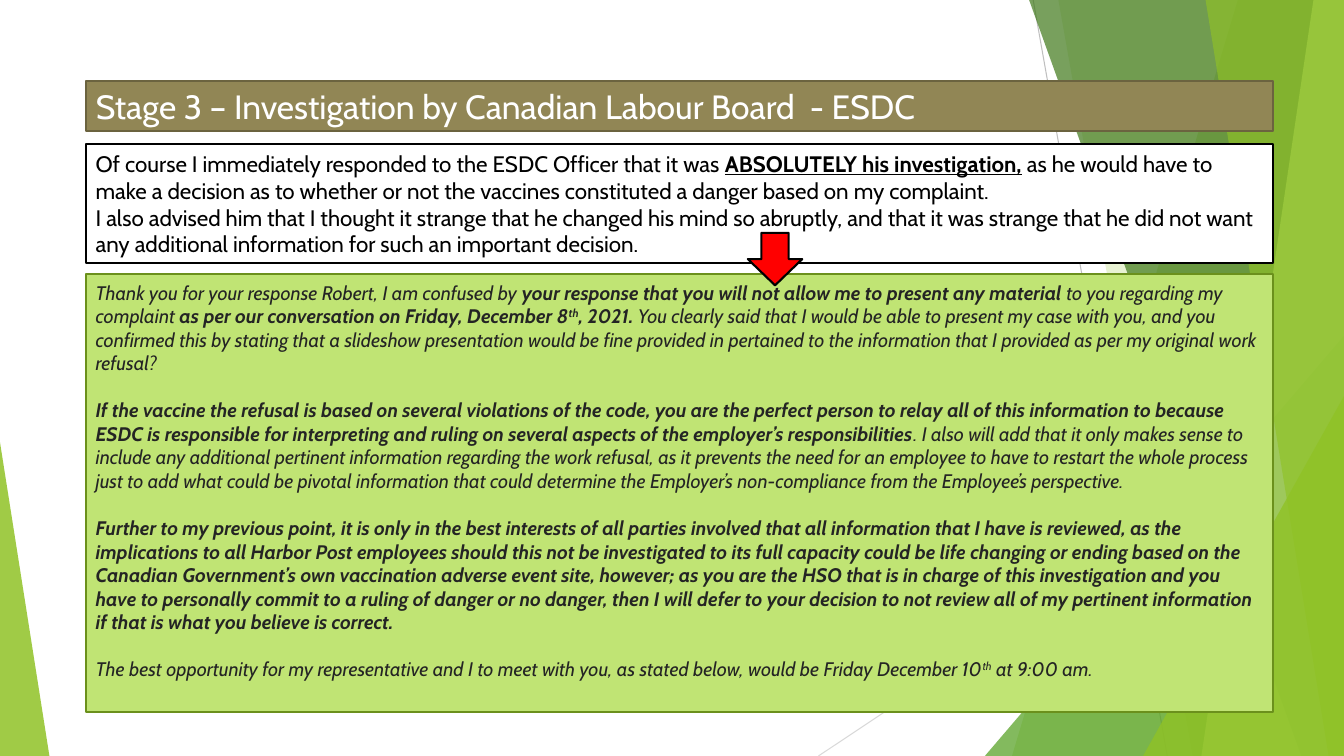
from lxml.etree import SubElement
from pptx import Presentation
from pptx.dml.color import RGBColor
from pptx.enum.shapes import MSO_CONNECTOR, MSO_SHAPE
from pptx.enum.text import MSO_ANCHOR, MSO_AUTO_SIZE, PP_ALIGN
from pptx.oxml.ns import qn
from pptx.util import Pt

# Content: each paragraph is a list of (text, style); b bold, u underline, s superscript
TITLE = [[("Stage 3 – Investigation by Canadian Labour Board  - ESDC", "")]]
REPLY = [
    [("Of course I immediately responded to the ESDC Officer that it was ", ""),
     ("ABSOLUTELY his investigation,", "bu"),
     (" as he would have to make a decision as to whether or not the vaccines constituted "
      "a danger based on my complaint.", "")],
    [("I also advised him that I thought it strange that he changed his mind so abruptly, "
      "and that it was strange that he did not want any additional information for such "
      "an important decision.", "")],
]
LETTER = [
    [("Thank you for your response Robert, I am confused by ", ""),
     ("your response that you will not allow me to present any material ", "b"),
     ("to you regarding my complaint ", ""),
     ("as per our conversation on Friday, December 8", "b"),
     ("th", "bs"),
     (", 2021. ", "b"),
     ("You clearly said that I would be able to present my case with you, and you confirmed "
      "this by stating that a slideshow presentation would be fine provided in pertained to "
      "the information that I provided as per my original work refusal?", "")],
    [("If the vaccine the refusal is based on several violations of the code, you are the "
      "perfect person to relay all of this information to because ESDC is responsible for "
      "interpreting and ruling on several aspects of the employer’s responsibilities", "b"),
     (". I also will add that it only makes sense to include any additional pertinent "
      "information regarding the work refusal, as it prevents the need for an employee to "
      "have to restart the whole process just to add what could be pivotal information that "
      "could determine the Employer’s non-compliance from the Employee’s perspective.", "")],
    [("Further to my previous point, it is only in the best interests of all parties involved "
      "that all information that I have is reviewed, as the implications to all Harbor Post "
      "employees should this not be investigated to its full capacity could be life changing "
      "or ending based on the Canadian Government’s own vaccination adverse event site, "
      "however; as you are the HSO that is in charge of this investigation and you have to "
      "personally commit to a ruling of danger or no danger, then I will defer to your "
      "decision to not review all of my pertinent information if that is what you believe "
      "is correct.", "b")],
    [("The best opportunity for my representative and I to meet with you, as stated below, "
      "would be Friday December 10", ""),
     ("th", "s"),
     (" at 9:00 am.", "")],
]
COLORS = {
    "lime": "90C226", "green": "54A021", "forest": "3F7819", "pale": "C0E474",
    "olive": "918655", "olive edge": "6B633F", "lime edge": "6B901C",
    "white": "FFFFFF", "black": "000000", "ink": "242424", "red": "FF0000",
    "grey": "BFBFBF", "light grey": "D9D9D9",
}
WIDTH, HEIGHT = 960, 540
BOX_LEFT, BOX_WIDTH = 61.2, 848.2

RAYS = [(738, 0, 833.8, HEIGHT, "grey"), (WIDTH, 290.2, 584.6, HEIGHT, "light grey")]
# Bands run to the right edge: top x, bottom x, colour, opacity in percent
# Wedges stand on the bottom edge: left, width, height, apex, colour, opacity
BACKDROP = [
    ("band", (884.2, 722.9), "lime", 30),
    ("band", (756, 851.8), "lime", 20),
    ("wedge", (703.5, 256.5, 300.2, 1), "green", 72),
    ("band", (735.1, 929.5), "forest", 70),
    ("band", (938.2, 858.2), "pale", 70),
    ("band", (861.1, 949), "lime", 65),
    ("wedge", (816.5, 143.5, 257, 1), "lime", 80),
    ("wedge", (0, 35.3, 224, 0), "lime", 85),
]

presentation = Presentation()
presentation.slide_width, presentation.slide_height = Pt(WIDTH), Pt(HEIGHT)
slide = presentation.slides.add_slide(presentation.slide_layouts[5])
shapes = slide.shapes


def rgb(name):
    return RGBColor.from_string(COLORS[name])


def paint(shape, fill, edge=None, opacity=100):
    shape.fill.solid()
    shape.fill.fore_color.rgb = rgb(fill)
    if opacity < 100:
        color = shape.fill._xPr.find(qn("a:solidFill"))[0]
        SubElement(color, qn("a:alpha"), val=str(opacity * 1000))
    if edge:
        shape.line.color.rgb = rgb(edge)
        shape.line.width = Pt(1.5)
    else:
        shape.line.fill.background()


def add_preset(kind, left, top, width, height):
    shape = shapes.add_shape(kind, Pt(left), Pt(top), Pt(width), Pt(height))
    shape.shadow.inherit = False
    return shape


def write(shape, paragraphs, size, color, anchor=MSO_ANCHOR.MIDDLE, italic=None, gap=0):
    frame = shape.text_frame
    frame.word_wrap = True
    frame.auto_size = MSO_AUTO_SIZE.NONE
    frame.vertical_anchor = anchor
    for index, pieces in enumerate(paragraphs):
        paragraph = frame.add_paragraph() if index else frame.paragraphs[0]
        paragraph.alignment = PP_ALIGN.LEFT
        paragraph.space_before = Pt(gap if index else 0)
        for text, style in pieces:
            run = paragraph.add_run()
            run.text = text
            font = run.font
            font.name, font.size, font.italic = "Cabin", Pt(size), italic
            font.color.rgb = rgb(color)
            font.bold, font.underline = "b" in style, "u" in style
            if "s" in style:
                font._element.set("baseline", "30000")


# Background rays, bands and wedges
for x1, y1, x2, y2, color in RAYS:
    ray = shapes.add_connector(MSO_CONNECTOR.STRAIGHT, Pt(x1), Pt(y1), Pt(x2), Pt(y2))
    ray.line.color.rgb = rgb(color)
    ray.line.width = Pt(0.75)
    SubElement(ray.element.spPr, qn("a:effectLst"))

for kind, geometry, color, opacity in BACKDROP:
    if kind == "band":
        top_x, bottom_x = geometry
        builder = shapes.build_freeform(Pt(top_x), 0)
        corners = [(WIDTH, 0), (WIDTH, HEIGHT), (bottom_x, HEIGHT)]
        builder.add_line_segments([(Pt(x), Pt(y)) for x, y in corners], close=True)
        part = builder.convert_to_shape()
        part.shadow.inherit = False
    else:
        left, width, height, apex = geometry
        part = add_preset(MSO_SHAPE.ISOSCELES_TRIANGLE, left, HEIGHT - height, width, height)
        part.adjustments[0] = apex
    paint(part, color, opacity=opacity)

# Title bar, brought in front of the background
title = shapes.title
title.left, title.top, title.width, title.height = map(Pt, (BOX_LEFT, 57.6, BOX_WIDTH, 36))
title.element.getparent().append(title.element)
paint(title, "olive", "olive edge")
write(title, TITLE, 24, "white")

# Reply and letter boxes
reply = add_preset(MSO_SHAPE.RECTANGLE, BOX_LEFT, 103, BOX_WIDTH, 85)
paint(reply, "white", "black")
write(reply, REPLY, 16, "black")

letter = add_preset(MSO_SHAPE.RECTANGLE, BOX_LEFT, 196, BOX_WIDTH, 312.5)
paint(letter, "pale", "lime edge")
write(letter, LETTER, 14, "ink", MSO_ANCHOR.TOP, italic=True, gap=16.8)
letter.text_frame.margin_top = Pt(4.5)

# Arrow from the reply to the letter
arrow = add_preset(MSO_SHAPE.DOWN_ARROW, 534.2, 166.3, 38.9, 37.5)
paint(arrow, "red", "black")

presentation.save("out.pptx")
